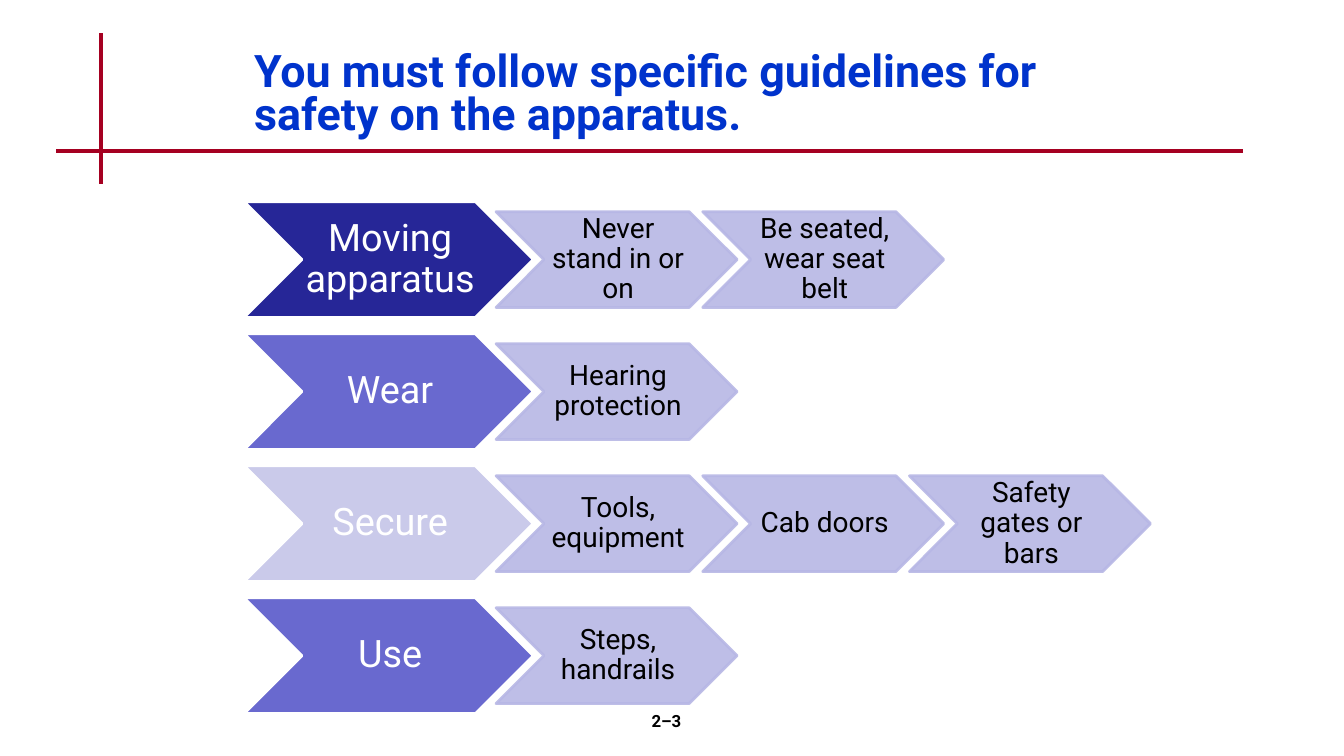
"""Build a slide of apparatus safety guidelines as rows of chevrons."""
from dataclasses import dataclass

import lxml.etree
import pptx
import pptx.dml.color
import pptx.enum.shapes
import pptx.enum.text
import pptx.oxml.ns
import pptx.shapes.autoshape
import pptx.slide
import pptx.text.text
import pptx.util

Inches = pptx.util.Inches
Pt = pptx.util.Pt
RGBColor = pptx.dml.color.RGBColor
PP_ALIGN = pptx.enum.text.PP_ALIGN
MIDDLE = pptx.enum.text.MSO_ANCHOR.MIDDLE

FONT = "Roboto"
WHITE = RGBColor(0xFF, 0xFF, 0xFF)
BLACK = RGBColor(0x00, 0x00, 0x00)
TITLE_BLUE = RGBColor(0x00, 0x33, 0xCC)
RULE_RED = RGBColor(0xA5, 0x00, 0x21)
NAVY = RGBColor(0x26, 0x26, 0x97)
VIOLET = RGBColor(0x69, 0x69, 0xCF)
PALE = RGBColor(0xCA, 0xCA, 0xEA)
LAVENDER = RGBColor(0xB7, 0xB7, 0xE5)

FIRST_ROW_TOP = 2.0
ROW_STEP = 1.31
TOPIC_LEFT = 2.42
FIRST_DETAIL_LEFT = 4.92
DETAIL_STEP = 2.05
DETAIL_OFFSET = 0.1


@dataclass(frozen=True)
class ChevronStyle:
    width: float
    height: float
    line: RGBColor
    text: RGBColor
    size: int
    opacity: int


@dataclass(frozen=True)
class Guideline:
    topic: str
    fill: RGBColor
    details: tuple[str, ...]


@dataclass(frozen=True)
class Rule:
    start: tuple[float, float]
    end: tuple[float, float]


TOPIC = ChevronStyle(2.87, 1.15, WHITE, WHITE, 27, 100)
DETAIL = ChevronStyle(2.39, 0.95, LAVENDER, BLACK, 20, 90)

GUIDELINES = (
    Guideline("Moving apparatus", NAVY, ("Never stand in or on", "Be seated, wear seat belt")),
    Guideline("Wear", VIOLET, ("Hearing protection",)),
    Guideline("Secure", PALE, ("Tools, equipment", "Cab doors", "Safety gates or bars")),
    Guideline("Use", VIOLET, ("Steps, handrails",)),
)
RULES = (Rule((1, 0.33), (1, 1.83)), Rule((0.56, 1.5), (12.33, 1.5)))


def format_paragraph(
    paragraph: pptx.text.text._Paragraph,
    size: int,
    color: RGBColor,
    alignment: PP_ALIGN,
    spacing: float = 1.0,
    bold: bool = False,
) -> None:
    paragraph.alignment = alignment
    paragraph.line_spacing = spacing
    for run in paragraph.runs:
        run.font.name = FONT
        run.font.size = Pt(size)
        run.font.bold = bold
        run.font.color.rgb = color


def set_opacity(shape: pptx.shapes.autoshape.Shape, percent: int) -> None:
    for color in shape.fill._xPr.iter(pptx.oxml.ns.qn("a:srgbClr")):
        alpha = lxml.etree.SubElement(color, pptx.oxml.ns.qn("a:alpha"))
        alpha.set("val", str(percent * 1000))


def add_rule(slide: pptx.slide.Slide, rule: Rule) -> None:
    connector = slide.shapes.add_connector(
        pptx.enum.shapes.MSO_CONNECTOR.STRAIGHT,
        *(Inches(value) for value in rule.start + rule.end),
    )
    connector.line.color.rgb = RULE_RED
    connector.line.width = Pt(3)
    properties = connector._element.spPr
    lxml.etree.SubElement(properties, pptx.oxml.ns.qn("a:effectLst"))


def add_chevron(
    slide: pptx.slide.Slide, text: str, left: float, top: float, fill: RGBColor, style: ChevronStyle
) -> None:
    shape = slide.shapes.add_shape(
        pptx.enum.shapes.MSO_SHAPE.CHEVRON,
        Inches(left), Inches(top), Inches(style.width), Inches(style.height),
    )
    shape.shadow.inherit = False
    shape.fill.solid()
    shape.fill.fore_color.rgb = fill
    shape.line.color.rgb = style.line
    shape.line.width = Pt(2)
    if style.opacity < 100:
        set_opacity(shape, style.opacity)
    frame = shape.text_frame
    frame.margin_left = Inches(0.03)
    frame.margin_right = 0
    frame.margin_top = frame.margin_bottom = Inches(0.01)
    frame.vertical_anchor = MIDDLE
    frame.word_wrap = True
    frame.text = text
    format_paragraph(frame.paragraphs[0], style.size, style.text, PP_ALIGN.CENTER, 0.9)


def add_guideline(slide: pptx.slide.Slide, guideline: Guideline, top: float) -> None:
    add_chevron(slide, guideline.topic, TOPIC_LEFT, top, guideline.fill, TOPIC)
    for column, detail in enumerate(guideline.details):
        left = FIRST_DETAIL_LEFT + column * DETAIL_STEP
        add_chevron(slide, detail, left, top + DETAIL_OFFSET, LAVENDER, DETAIL)


def set_title(slide: pptx.slide.Slide, text: str) -> None:
    title = slide.shapes.title
    title.left, title.top = Inches(2.42), Inches(0.33)
    title.width, title.height = Inches(9.08), Inches(1.25)
    frame = title.text_frame
    frame.text = text
    frame.word_wrap = True
    frame.auto_size = pptx.enum.text.MSO_AUTO_SIZE.NONE
    frame.vertical_anchor = MIDDLE
    format_paragraph(frame.paragraphs[0], 32, TITLE_BLUE, PP_ALIGN.LEFT, 0.8, True)


def add_page_number(slide: pptx.slide.Slide, text: str) -> None:
    box = slide.shapes.add_textbox(Inches(5.22), Inches(7), Inches(2.78), Inches(0.5))
    box.text_frame.word_wrap = True
    box.text_frame.text = text
    format_paragraph(box.text_frame.paragraphs[0], 12, BLACK, PP_ALIGN.CENTER, bold=True)


def main() -> None:
    presentation = pptx.Presentation()
    presentation.slide_width = Inches(13.33)
    presentation.slide_height = Inches(7.5)
    slide = presentation.slides.add_slide(presentation.slide_layouts[5])
    for rule in RULES:
        add_rule(slide, rule)
    for row, guideline in enumerate(GUIDELINES):
        add_guideline(slide, guideline, FIRST_ROW_TOP + row * ROW_STEP)
    set_title(slide, "You must follow specific guidelines for safety on the apparatus.")
    add_page_number(slide, "2–3")
    presentation.save("out.pptx")


if __name__ == "__main__":
    main()
